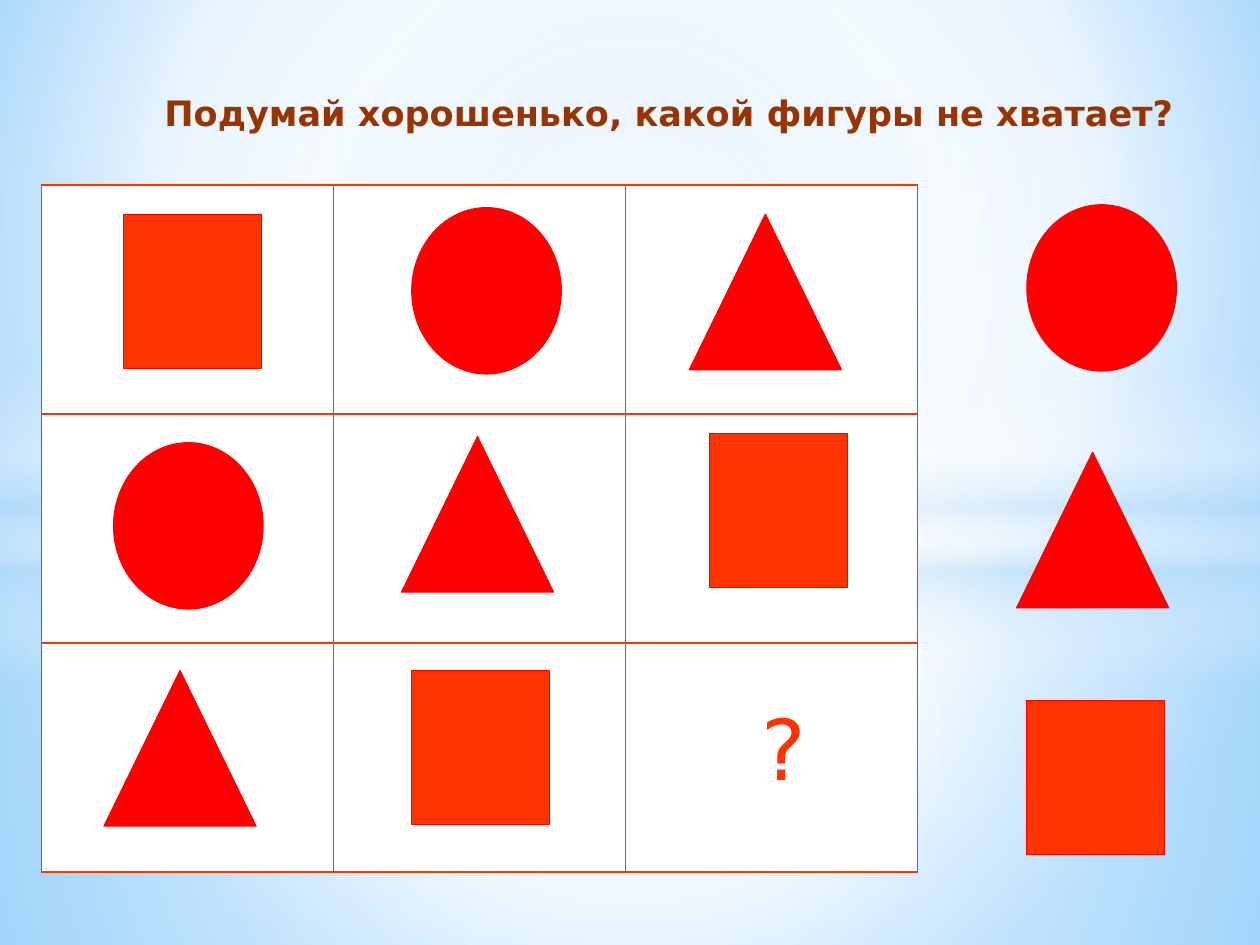
import pptx
import pptx.util
import pptx.dml.color
import pptx.enum.shapes
import pptx.enum.text
import pptx.oxml
import pptx.oxml.ns

Pt = pptx.util.Pt
Kind = pptx.enum.shapes.MSO_SHAPE
qn = pptx.oxml.ns.qn
NS = pptx.oxml.ns.nsdecls("a")

# Content
FONT = "DejaVu Sans"
TITLE = ("Подумай хорошенько, какой фигуры не хватает?", 20, "993300", True)
MARK = ("?", 48, "FF3300", False)

# Gradient stops: position, colour, opacity; the path is a focus box or an angle
BACK = ([(0, "9ED5FF", 100), (60, "FFFFFF", 100), (100, "5BB9FF", 100)],
        (20, 10, 20, 60))
MID = (50, 50, 50, 50)
GLOWS = [
    (Kind.RECTANGLE, (0, 304.6, 720, 235.4),
     [(0, "FFFFFF", 91), (37, "FFFFFF", 76), (100, "B4DCFA", 79)], MID),
    (Kind.RECTANGLE, (0, 0, 720, 304.6),
     [(0, "FFFFFF", 89), (48, "FFFFFF", 62), (100, "B4DCFA", 79)], MID),
    (Kind.RECTANGLE, (0, 208.8, 720, 180),
     [(0, "FFFFFF", 0), (29, "FFFFFF", 30), (45, "B4DCFA", 40),
      (55, "FFFFFF", 26), (65, "B4DCFA", 60), (100, "FFFFFF", 0)], 90),
    (Kind.OVAL, (0, 126, 720, 401.8),
     [(0, "FFFFFF", 100), (54, "FFFFFF", 0)], MID),
]

# Table grid: left, top, cell width, cell height, cells per side
LEFT, TOP, WIDE, HIGH, SIDE = 23.8, 105.8, 166.8, 130.8, 3

# Figure styles: preset, width, height, fill
STYLES = {
    "square": (Kind.RECTANGLE, 78.8, 88, "FF3300"),
    "circle": (Kind.OVAL, 85.4, 95, "FF0000"),
    "wedge": (Kind.ISOSCELES_TRIANGLE, 86.8, 88.8, "FF0000"),
}
# Figures, placed by hand inside the cells; the last three are the answers
FIGURES = [
    ("square", 70.6, 122.5), ("circle", 235.3, 118.7), ("wedge", 394, 122.4),
    ("circle", 64.9, 253), ("wedge", 229.5, 249.5), ("square", 405.6, 247.6),
    ("wedge", 59.5, 383.2), ("square", 235.3, 383.3),
    ("circle", 586.8, 117), ("wedge", 581, 258.5), ("square", 586.8, 400.3),
]


def color(code):
    return pptx.dml.color.RGBColor.from_string(code)


def blend(fill, root, stops, way):
    """Give the fill of root a gradient with opacity."""
    fill.gradient()
    old = root.find(".//" + qn("a:gradFill"))
    marks = "".join(
        f'<a:gs pos="{pos * 1000}"><a:srgbClr val="{code}">'
        f'<a:alpha val="{part * 1000}"/></a:srgbClr></a:gs>'
        for pos, code, part in stops)
    if isinstance(way, tuple):
        box = " ".join(f'{k}="{v * 1000}"' for k, v in zip("ltrb", way))
        tail = f'<a:path path="circle"><a:fillToRect {box}/></a:path>'
    else:
        tail = f'<a:lin ang="{way * 60000}" scaled="0"/>'
    new = pptx.oxml.parse_xml(
        f'<a:gradFill {NS} rotWithShape="1"><a:gsLst>{marks}</a:gsLst>'
        f'{tail}</a:gradFill>')
    old.getparent().replace(old, new)


def add_shape(slide, kind, box):
    shape = slide.shapes.add_shape(kind, *map(Pt, box))
    shape.shadow.inherit = False
    return shape


def add_text(slide, box, item):
    text, size, code, bold = item
    frame = slide.shapes.add_textbox(*map(Pt, box)).text_frame
    frame.word_wrap = True
    para = frame.paragraphs[0]
    para.alignment = pptx.enum.text.PP_ALIGN.CENTER
    run = para.add_run()
    run.text = text
    run.font.name, run.font.size, run.font.bold = FONT, Pt(size), bold
    run.font.color.rgb = color(code)


def frame_cell(cell):
    """White cell with a red border on every side."""
    props = cell._tc.get_or_add_tcPr()
    for side in ("lnL", "lnR", "lnT", "lnB"):
        props.append(pptx.oxml.parse_xml(
            f'<a:{side} {NS} w="12700"><a:solidFill>'
            f'<a:srgbClr val="FF3300"/></a:solidFill></a:{side}>'))
    cell.fill.solid()
    cell.fill.fore_color.rgb = color("FFFFFF")


def main():
    deck = pptx.Presentation()
    deck.slide_width, deck.slide_height = Pt(720), Pt(540)
    slide = deck.slides.add_slide(deck.slide_layouts[6])

    # Background and soft glows
    blend(slide.background.fill, slide.element, *BACK)
    for kind, box, stops, way in GLOWS:
        glow = add_shape(slide, kind, box)
        glow.line.fill.background()
        blend(glow.fill, glow.element, stops, way)

    add_text(slide, (70.6, 49, 623.5, 31.7), TITLE)

    # Grid
    grid = slide.shapes.add_table(
        SIDE, SIDE, Pt(LEFT), Pt(TOP), Pt(WIDE * SIDE), Pt(HIGH * SIDE)).table
    for row in grid.rows:
        row.height = Pt(HIGH)
        for cell in row.cells:
            frame_cell(cell)

    # Figures and the open question
    for name, left, top in FIGURES:
        kind, wide, high, code = STYLES[name]
        shape = add_shape(slide, kind, (left, top, wide, high))
        shape.fill.solid()
        shape.fill.fore_color.rgb = color(code)
        shape.line.color.rgb = color("FF0000")
        shape.line.width = Pt(0.75)
    add_text(slide, (405.4, 394.6, 85, 64.8), MARK)

    deck.save("out.pptx")


if __name__ == "__main__":
    main()
